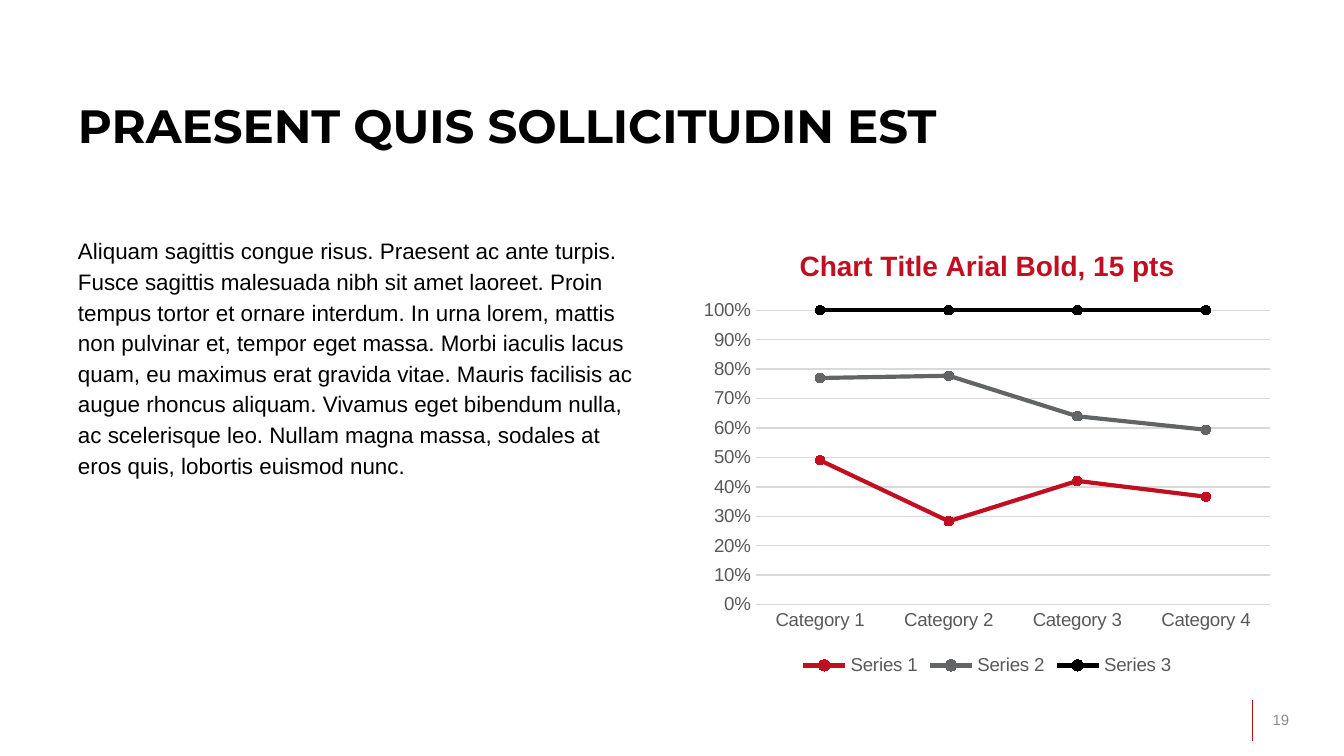
"""Build a slide with a title, a paragraph and a percentage line chart."""
from lxml.etree import SubElement
from pptx import Presentation
from pptx.chart.data import CategoryChartData
from pptx.dml.color import RGBColor
from pptx.enum.chart import (XL_CHART_TYPE as ChartType, XL_LEGEND_POSITION as LegendPosition,
                             XL_MARKER_STYLE as Marker, XL_TICK_MARK as Tick)
from pptx.enum.shapes import MSO_CONNECTOR as Connector
from pptx.enum.text import MSO_ANCHOR as Anchor, MSO_AUTO_SIZE as AutoSize, PP_ALIGN as Align
from pptx.oxml.ns import qn
from pptx.util import Cm, Pt

RED, GRAY, BLACK = "C10E20", "636466", "000000"
LABEL, GRID, NUMBER = "595959", "D9D9D9", "8C8C8C"
LEFT, CONTENT_TOP = 1.22, 4.29
COLUMN_WIDTH, COLUMN_HEIGHT = 11.15, 8.59
PARAGRAPH = (
    "Aliquam sagittis congue risus. Praesent ac ante turpis. Fusce sagittis malesuada nibh "
    "sit amet laoreet. Proin tempus tortor et ornare interdum. In urna lorem, mattis non "
    "pulvinar et, tempor eget massa. Morbi iaculis lacus quam, eu maximus erat gravida vitae. "
    "Mauris facilisis ac augue rhoncus aliquam. Vivamus eget bibendum nulla, ac scelerisque "
    "leo. Nullam magna massa, sodales at eros quis, lobortis euismod nunc."
)
CATEGORIES = [f"Category {number}" for number in range(1, 5)]
SERIES = [
    ("Series 1", (49, 28, 42, 37), RED),
    ("Series 2", (28, 49, 22, 23), GRAY),
    ("Series 3", (23, 22, 36, 41), BLACK),
]


def rgb(color):
    return RGBColor.from_string(color)


class SlideBuilder:
    heading_font = "Montserrat"
    body_font = "Arial"

    def __init__(self, slide):
        self.slide = slide

    def style_font(self, font, size, color, name=None, bold=False):
        font.name, font.size, font.bold = name or self.body_font, Pt(size), bold
        font.color.rgb = rgb(color)

    def style_line(self, line, color, width):
        line.color.rgb, line.width = rgb(color), Pt(width)

    def fill_text(self, shape, box, text, size, color, anchor=Anchor.TOP, name=None, bold=False):
        shape.left, shape.top, shape.width, shape.height = map(Cm, box)
        frame = shape.text_frame
        frame.text = text
        frame.word_wrap, frame.auto_size = True, AutoSize.NONE
        frame.vertical_anchor = anchor
        paragraph = frame.paragraphs[0]
        paragraph.alignment = Align.LEFT
        self.style_font(paragraph.runs[0].font, size, color, name, bold)
        return paragraph

    def title(self, box, text):
        self.fill_text(self.slide.shapes.title, box, text, 25, BLACK,
                       name=self.heading_font, bold=True)

    def body(self, box, text):
        paragraph = self.fill_text(self.slide.placeholders[1], box, text, 12, BLACK)
        paragraph.line_spacing, paragraph.space_before = 1.14, Pt(0)
        properties = paragraph._p.get_or_add_pPr()
        properties.set("marL", "0")
        properties.set("indent", "0")
        SubElement(properties, qn("a:buNone"))

    def page_number(self, box, text):
        label = self.slide.shapes.add_textbox(*map(Cm, box))
        self.fill_text(label, box, text, 8, NUMBER, Anchor.MIDDLE)

    def rule(self, x, top, bottom):
        divider = self.slide.shapes.add_connector(
            Connector.STRAIGHT, Cm(x), Cm(top), Cm(x), Cm(bottom))
        self.style_line(divider.line, RED, 0.5)
        SubElement(divider._element.spPr, qn("a:effectLst"))

    def line_chart(self, box, heading, categories, series):
        data = CategoryChartData()
        data.categories = categories
        for name, values, _ in series:
            data.add_series(name, values)
        chart = self.slide.shapes.add_chart(
            ChartType.LINE_MARKERS_STACKED_100, *map(Cm, box), data).chart
        self.style_font(chart.font, 10, BLACK)

        chart.has_title = True
        chart.chart_title.include_in_layout = False
        title = chart.chart_title.text_frame
        title.text = heading
        self.style_font(title.paragraphs[0].runs[0].font, 15, RED, bold=True)

        chart.has_legend = True
        chart.legend.position = LegendPosition.BOTTOM
        chart.legend.include_in_layout = False
        self.style_font(chart.legend.font, 10, LABEL)

        for axis in (chart.category_axis, chart.value_axis):
            axis.major_tick_mark = axis.minor_tick_mark = Tick.NONE
            self.style_font(axis.tick_labels.font, 10, LABEL)
        self.style_line(chart.category_axis.format.line, GRID, 0.75)
        percent = chart.value_axis
        percent.format.line.fill.background()
        percent.has_major_gridlines = True
        self.style_line(percent.major_gridlines.format.line, GRID, 0.75)
        percent.tick_labels.number_format = "0%"
        percent.tick_labels.number_format_is_linked = False

        plot = chart.plots[0]
        plot.vary_by_categories = False
        for curve, (_, _, color) in zip(plot.series, series):
            curve.smooth = False
            self.style_line(curve.format.line, color, 2.25)
            curve.marker.style, curve.marker.size = Marker.CIRCLE, 5
            curve.marker.format.fill.solid()
            curve.marker.format.fill.fore_color.rgb = rgb(color)
            self.style_line(curve.marker.format.line, color, 0.75)


def main():
    deck = Presentation()
    deck.slide_width, deck.slide_height = Cm(25.4), Cm(14.29)
    builder = SlideBuilder(deck.slides.add_slide(deck.slide_layouts[1]))
    builder.rule(23.67, 13.23, 14)
    builder.title((LEFT, 1.7, 22.96, 2.57), "PRAESENT QUIS SOLLICITUDIN EST")
    builder.body((LEFT, CONTENT_TOP, COLUMN_WIDTH, COLUMN_HEIGHT), PARAGRAPH)
    builder.line_chart((13.08, CONTENT_TOP, COLUMN_WIDTH, COLUMN_HEIGHT),
                       "Chart Title Arial Bold, 15 pts", CATEGORIES, SERIES)
    builder.page_number((23.8, 13.23, 1.6, 0.76), "19")
    deck.save("out.pptx")


if __name__ == "__main__":
    main()
